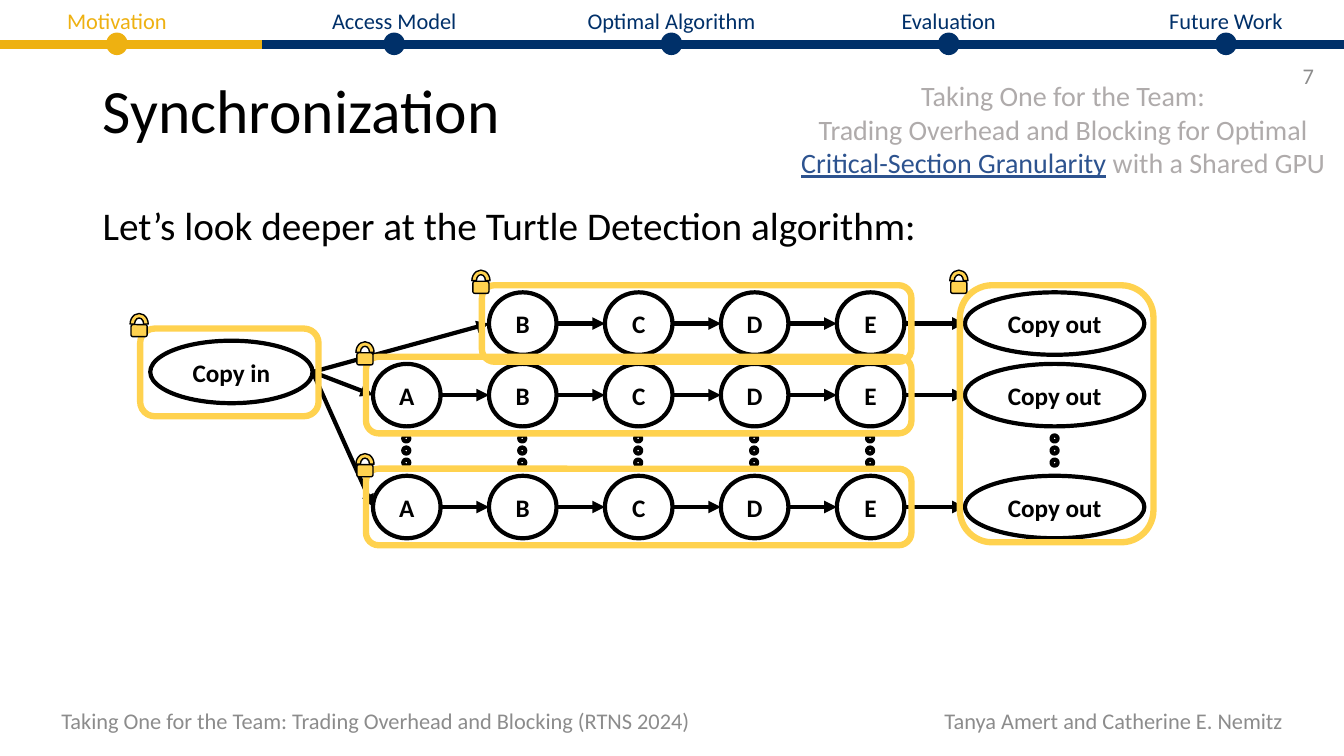
from lxml import etree
from pptx import Presentation
from pptx import util as u
from pptx.dml.color import RGBColor
from pptx.enum import shapes, text
from pptx.oxml.ns import qn

PX = 9144
FONT = "Calibri"
BLACK = RGBColor(0x00, 0x00, 0x00)
GRAY = RGBColor(0x8C, 0x8C, 0x8C)
LIGHT_GRAY = RGBColor(0xAF, 0xAB, 0xAB)
LINK_BLUE = RGBColor(0x2D, 0x53, 0x8F)
NAVY = RGBColor(0x00, 0x30, 0x69)
GOLD = RGBColor(0xEE, 0xB1, 0x11)
LOCK_YELLOW = RGBColor(0xFF, 0xD2, 0x4F)

KINDS = shapes.MSO_SHAPE
ALIGN = text.PP_ALIGN
ANCHOR = text.MSO_ANCHOR

SECTIONS = ["Motivation", "Access Model", "Optimal Algorithm", "Evaluation", "Future Work"]
STAGES = "ABCDE"
STAGE_STEP = 115
STAGE_WIDTH = 67
NODE_HEIGHT = 62
ROW_TOPS = [0, 71, 182]
ROW_FIRST_STAGES = [1, 0, 0]
COPY_OUT_LEFT = 808
COPY_OUT_WIDTH = 178


def emu(*lengths):
    return [u.Emu(round(length * PX)) for length in lengths]


def style_run(run, size, color, bold=False):
    run.font.name = FONT
    run.font.size = u.Pt(size)
    run.font.color.rgb = color
    run.font.bold = bold


def add_text(slide, box, wording, size, color, align=ALIGN.LEFT, anchor=ANCHOR.MIDDLE):
    frame = slide.shapes.add_textbox(*emu(*box)).text_frame
    frame.word_wrap = True
    frame.vertical_anchor = anchor
    frame.text = wording
    paragraph = frame.paragraphs[0]
    paragraph.alignment = align
    for run in paragraph.runs:
        style_run(run, size, color)
    return paragraph


def add_outline(parent, kind, box, color, weight, fill=None):
    shape = parent.shapes.add_shape(kind, *emu(*box))
    shape.shadow.inherit = False
    if fill is None:
        shape.fill.background()
    else:
        shape.fill.solid()
        shape.fill.fore_color.rgb = fill
    shape.line.color.rgb = color
    shape.line.width = u.Pt(weight)
    return shape


def add_line(slide, start, end, color, weight, arrow=False):
    line = slide.shapes.add_connector(shapes.MSO_CONNECTOR.STRAIGHT, *emu(*start, *end))
    line.line.color.rgb = color
    line.line.width = u.Pt(weight)
    if arrow:
        etree.SubElement(line.line._get_or_add_ln(), qn("a:tailEnd"), type="triangle")
    etree.SubElement(line._element.spPr, qn("a:effectLst"))


def add_arrow(slide, start, end):
    add_line(slide, start, end, BLACK, 3, arrow=True)


def add_node(slide, box, label):
    shape = add_outline(slide, KINDS.OVAL, box, BLACK, 3)
    frame = shape.text_frame
    frame.word_wrap = False
    frame.vertical_anchor = ANCHOR.MIDDLE
    frame.text = label
    paragraph = frame.paragraphs[0]
    paragraph.alignment = ALIGN.CENTER
    style_run(paragraph.runs[0], 18, BLACK, bold=True)


def add_dots(slide, center, top):
    group = slide.shapes.add_group_shape()
    for index in range(3):
        add_outline(group, KINDS.OVAL, (center - 3, top + 12 * index, 6, 6), BLACK, 3)


def add_locked_region(slide, box):
    add_outline(slide, KINDS.ROUNDED_RECTANGLE, box, LOCK_YELLOW, 4.5)
    left, top = box[0] - 10, box[1] - 15
    lock = slide.shapes.add_group_shape()
    add_outline(lock, KINDS.ROUNDED_RECTANGLE, (left + 1, top + 11, 16, 12), BLACK, 1, LOCK_YELLOW)
    add_outline(lock, KINDS.BLOCK_ARC, (left, top, 18, 21), BLACK, 1, LOCK_YELLOW)


def add_navigation(slide, box):
    left, top, width, height = box
    bar = top + height - 11
    add_line(slide, (left, bar), (left + width, bar), NAVY, 6)
    add_line(slide, (left, bar), (left + 260, bar), GOLD, 6)
    for index, section in enumerate(SECTIONS):
        color = GOLD if index == 0 else NAVY
        center = left + 116 + 275 * index
        add_text(slide, (center - 105, top + 2, 210, 37), section, 16, color, ALIGN.CENTER, ANCHOR.TOP)
        add_outline(slide, KINDS.OVAL, (center - 10, bar - 11, 20, 21), color, 1, color)


def add_heading(slide, box):
    left, top, width, height = box
    title = add_text(slide, (left, top, width, 145), "Synchronization", 44, BLACK)
    title.line_spacing = 0.9
    lead = add_text(slide, (left, top + 160, width, height - 160),
                    "Let’s look deeper at the Turtle Detection algorithm:", 28, BLACK, anchor=ANCHOR.TOP)
    lead.line_spacing = 0.9
    lead.space_before = u.Pt(10)


def add_paper_title(slide, box):
    paragraph = add_text(slide, box,
                         "Taking One for the Team:\vTrading Overhead and Blocking for Optimal\v",
                         20, LIGHT_GRAY, ALIGN.CENTER)
    for wording, color in [("Critical-Section Granularity", LINK_BLUE), (" with a Shared GPU", LIGHT_GRAY)]:
        run = paragraph.add_run()
        run.text = wording
        style_run(run, 20, color)
        run.font.underline = color == LINK_BLUE


def add_footer(slide, box):
    left, top, width, height = box
    add_text(slide, (left, top, 660, height),
             "Taking One for the Team: Trading Overhead and Blocking (RTNS 2024)", 16, GRAY)
    add_text(slide, (left + width - 379, top, 379, height),
             "Tanya Amert and Catherine E. Nemitz", 16, GRAY, ALIGN.RIGHT)


def add_pipeline(slide, box):
    left, top, width, height = box
    stages_left = left + 221
    copy_out_left = left + COPY_OUT_LEFT
    copy_in_exit = (left + 161, top + 79)
    add_node(slide, (left, top + 48, 161, NODE_HEIGHT), "Copy in")

    for row_top, first in zip(ROW_TOPS, ROW_FIRST_STAGES):
        node_top = top + row_top
        middle = node_top + NODE_HEIGHT // 2
        start = copy_in_exit
        for index in range(first, len(STAGES)):
            stage_left = stages_left + STAGE_STEP * index
            add_node(slide, (stage_left, node_top, STAGE_WIDTH, NODE_HEIGHT), STAGES[index])
            add_arrow(slide, start, (stage_left, middle))
            start = (stage_left + STAGE_WIDTH, middle)
        add_arrow(slide, start, (copy_out_left, middle))
        add_node(slide, (copy_out_left, node_top, COPY_OUT_WIDTH, NODE_HEIGHT), "Copy out")

    centers = [stages_left + STAGE_STEP * index + STAGE_WIDTH // 2 for index in range(len(STAGES))]
    for center in centers + [copy_out_left + COPY_OUT_WIDTH // 2]:
        add_dots(slide, center, top + 142)

    add_locked_region(slide, (left - 10, top + 36, 177, 87))
    for row_top, first in zip(ROW_TOPS, ROW_FIRST_STAGES):
        region_left = stages_left + STAGE_STEP * first - 7
        add_locked_region(slide, (region_left, top + row_top - 7, 904 - region_left, 76))
    add_locked_region(slide, (copy_out_left - 5, top - 7, width - COPY_OUT_LEFT + 14, height + 11))


def main():
    presentation = Presentation()
    presentation.slide_width, presentation.slide_height = emu(1333, 750)
    slide = presentation.slides.add_slide(presentation.slide_layouts[6])
    add_footer(slide, (51, 695, 1231, 40))
    add_heading(slide, (92, 40, 1150, 636))
    add_text(slide, (1013, 55, 300, 40), "7", 16, GRAY, ALIGN.RIGHT)
    add_paper_title(slide, (782, 66, 545, 124))
    add_pipeline(slide, (149, 290, 986, 244))
    add_navigation(slide, (0, 0, 1333, 55))
    presentation.save("out.pptx")


if __name__ == "__main__":
    main()
